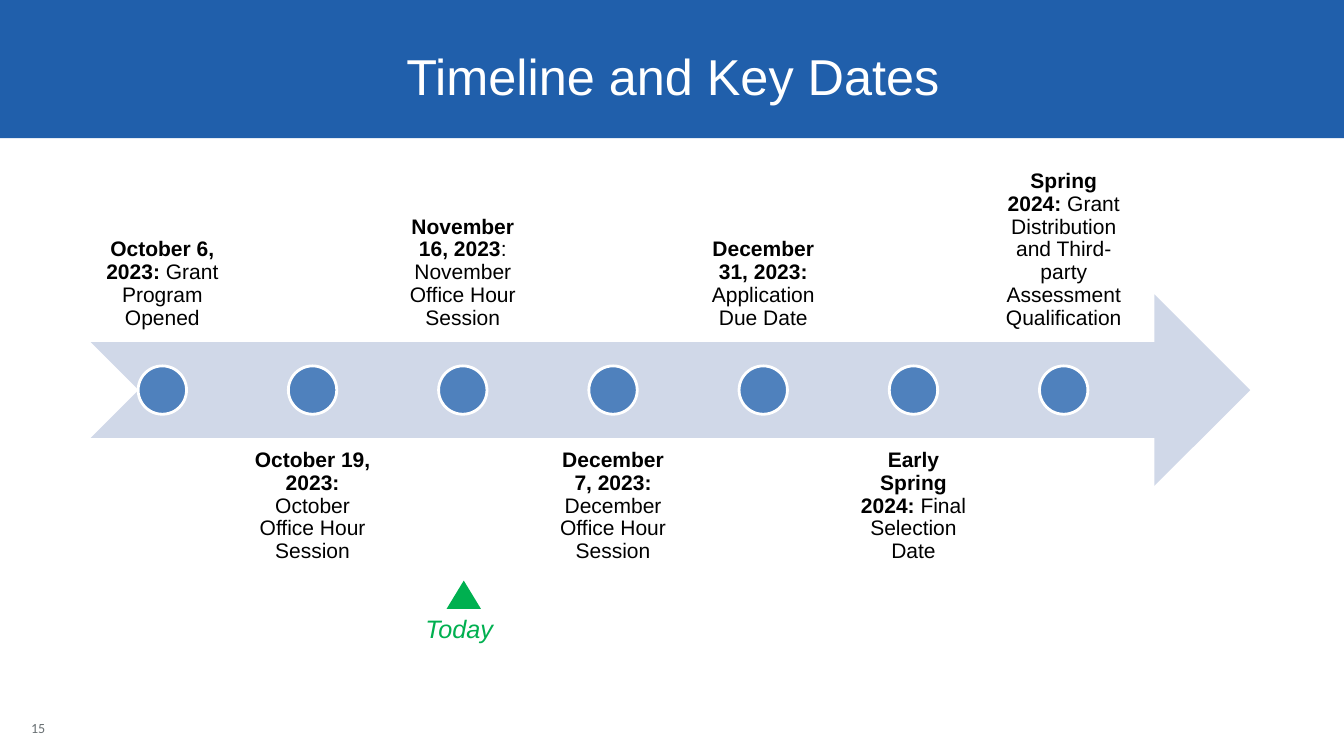
from pptx import Presentation
from pptx.dml.color import RGBColor
from pptx.enum.shapes import MSO_SHAPE
from pptx.enum.text import MSO_ANCHOR, MSO_AUTO_SIZE, PP_ALIGN
from pptx.util import Emu, Pt

MILESTONES = [
    ("October 6, 2023: ", "Grant Program Opened"),
    ("October 19, 2023:", " October Office Hour Session"),
    ("November 16, 2023", ": November Office Hour Session"),
    ("December 7, 2023: ", "December Office Hour Session"),
    ("December 31, 2023: ", "Application Due Date"),
    ("Early Spring 2024: ", "Final Selection Date"),
    ("Spring 2024: ", "Grant Distribution and Third-party Assessment Qualification"),
]
STEP = 149
GREEN = "00B050"


def px(n):
    return Emu(n * 9144)


def rgb(value):
    return RGBColor.from_string(value)


class TimelineSlide:
    """Holds the style and the current slide, and draws its elements."""

    font = "Arial"

    def __init__(self, prs):
        self.s = prs.slides.add_slide(prs.slide_layouts[5])

    def format_run(self, r, size, color, bold=False, italic=False, font=None):
        r.font.name = font or self.font
        r.font.size = Pt(size)
        r.font.color.rgb = rgb(color)
        r.font.bold = bold
        r.font.italic = italic

    def title(self, text, left, top, width, height):
        sp = self.s.shapes.title
        sp.left, sp.top, sp.width, sp.height = map(px, (left, top, width, height))
        tf = sp.text_frame
        tf.text = text
        tf.auto_size = MSO_AUTO_SIZE.NONE
        tf.vertical_anchor = MSO_ANCHOR.BOTTOM
        tf.margin_top = tf.margin_bottom = 0
        p = tf.paragraphs[0]
        p.alignment = PP_ALIGN.CENTER
        self.format_run(p.runs[0], 36, "FFFFFF")

    def shape(self, kind, left, top, width, height, fill, line=None):
        sp = self.s.shapes.add_shape(kind, *map(px, (left, top, width, height)))
        sp.shadow.inherit = False
        sp.fill.solid()
        sp.fill.fore_color.rgb = rgb(fill)
        if line:
            sp.line.color.rgb = rgb(line)
            sp.line.width = Pt(2)
        else:
            sp.line.fill.background()
        return sp

    def banner(self, width, height, fill):
        sp = self.shape(MSO_SHAPE.RECTANGLE, 0, 0, width, height, fill)
        self.s.shapes.title._element.addprevious(sp._element)

    def text(self, text, left, top, width, height, anchor=MSO_ANCHOR.TOP, **style):
        tf = self.s.shapes.add_textbox(*map(px, (left, top, width, height))).text_frame
        tf.word_wrap = True
        tf.vertical_anchor = anchor
        tf.text = text
        self.format_run(tf.paragraphs[0].runs[0], **style)
        return tf

    def milestone(self, index, date, event):
        left = 90 + index * STEP
        above = index % 2 == 0
        top, anchor = (149, MSO_ANCHOR.BOTTOM) if above else (434, MSO_ANCHOR.TOP)
        tf = self.text(date, left, top, 142, 190, anchor, size=15, color="000000", bold=True)
        tf.margin_left = tf.margin_right = tf.margin_top = tf.margin_bottom = px(12)
        p = tf.paragraphs[0]
        p.alignment = PP_ALIGN.CENTER
        p.line_spacing = 0.9
        r = p.add_run()
        r.text = event
        self.format_run(r, 15, "000000")
        self.shape(MSO_SHAPE.OVAL, left + 47, 363, 48, 48, "4F81BD", "FFFFFF")


def main():
    prs = Presentation()
    prs.slide_width, prs.slide_height = px(1333), px(750)
    slide = TimelineSlide(prs)
    slide.banner(1333, 137, "205FAB")
    slide.title("Timeline and Key Dates", 90, 44, 1155, 61)
    slide.shape(MSO_SHAPE.NOTCHED_RIGHT_ARROW, 90, 292, 1150, 190, "D0D8E8")
    for index, (date, event) in enumerate(MILESTONES):
        slide.milestone(index, date, event)
    slide.text("15", 21, 714, 56, 17, MSO_ANCHOR.MIDDLE, size=10, color="697073", font="Calibri")
    slide.shape(MSO_SHAPE.ISOSCELES_TRIANGLE, 443, 576, 34, 28, GREEN)
    slide.text("Today", 412, 604, 95, 40, size=18, color=GREEN, italic=True)
    prs.save("out.pptx")


if __name__ == "__main__":
    main()
